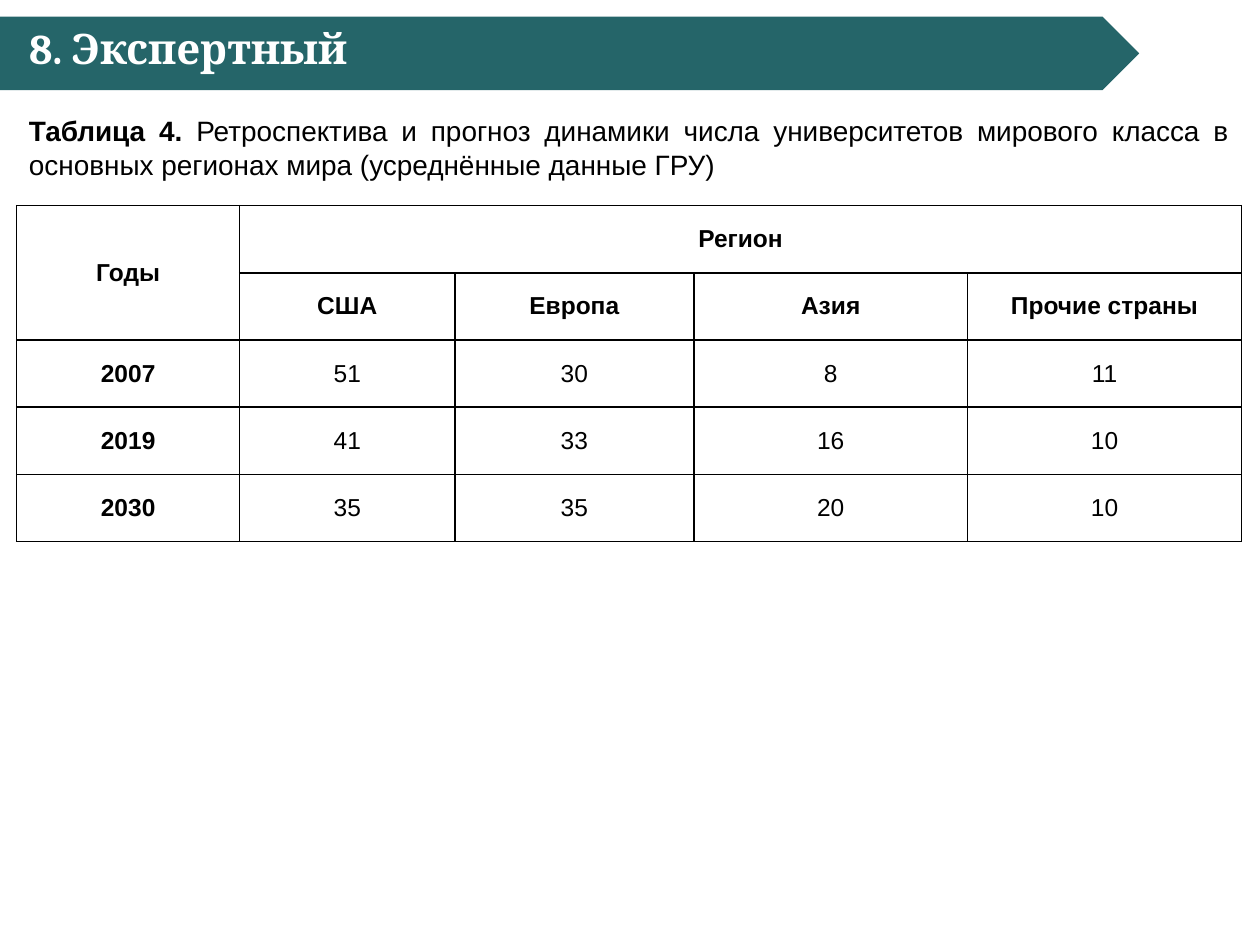
"""Builds the slide with the forecast table of world-class universities by region."""
from dataclasses import dataclass

from lxml import etree
from pptx import Presentation
from pptx.dml.color import RGBColor
from pptx.enum import shapes, text
from pptx.oxml import ns
from pptx.util import Pt


@dataclass(frozen=True)
class Theme:
    teal: str = "256569"
    white: str = "FFFFFF"
    black: str = "000000"
    heading_font: str = "Cambria"
    body_font: str = "Arial"
    title_size: int = 24
    caption_size: int = 16
    cell_size: int = 14


THEME = Theme()
LEFT = 9.5
CONTENT_WIDTH = 700
ROW_HEIGHT = 38.4
COLUMN_WIDTHS = (127.5, 123, 136.5, 156.5, 156.5)
ROWS = (
    ("Годы", "Регион", "", "", ""),
    ("", "США", "Европа", "Азия", "Прочие страны"),
    ("2007", "51", "30", "8", "11"),
    ("2019", "41", "33", "16", "10"),
    ("2030", "35", "35", "20", "10"),
)
HEADER_ROWS = 2


def add_run(paragraph, words, size, font=THEME.body_font, color=THEME.black, bold=False):
    run = paragraph.add_run()
    run.text = words
    run.font.name = font
    run.font.size = Pt(size)
    run.font.bold = bold
    run.font.color.rgb = RGBColor.from_string(color)


def add_banner(slide):
    banner = slide.shapes.add_shape(
        shapes.MSO_SHAPE.PENTAGON, Pt(0), Pt(9.5), Pt(651), Pt(42))
    banner.shadow.inherit = False
    banner.fill.solid()
    banner.fill.fore_color.rgb = RGBColor.from_string(THEME.teal)
    banner.line.fill.background()
    slide.shapes.title.element.addprevious(banner.element)


def set_title(slide, words):
    title = slide.shapes.title
    title.left, title.top, title.width, title.height = Pt(LEFT), Pt(9.5), Pt(291), Pt(36)
    frame = title.text_frame
    frame.word_wrap = True
    frame.auto_size = text.MSO_AUTO_SIZE.SHAPE_TO_FIT_TEXT
    frame.vertical_anchor = text.MSO_ANCHOR.TOP
    frame.paragraphs[0].alignment = text.PP_ALIGN.LEFT
    add_run(frame.paragraphs[0], words, THEME.title_size,
            font=THEME.heading_font, color=THEME.white, bold=True)


def add_caption(slide, label, words):
    caption = slide.shapes.add_textbox(Pt(LEFT), Pt(61.3), Pt(CONTENT_WIDTH), Pt(46))
    caption.text_frame.word_wrap = True
    paragraph = caption.text_frame.paragraphs[0]
    paragraph.alignment = text.PP_ALIGN.JUSTIFY
    add_run(paragraph, label, THEME.caption_size, bold=True)
    add_run(paragraph, words, THEME.caption_size)


def set_borders(cell):
    properties = cell._tc.get_or_add_tcPr()
    for side in ("a:lnL", "a:lnR", "a:lnT", "a:lnB"):
        border = etree.SubElement(properties, ns.qn(side), w=str(Pt(1)))
        fill = etree.SubElement(border, ns.qn("a:solidFill"))
        etree.SubElement(fill, ns.qn("a:srgbClr"), val=THEME.black)


def fill_cell(cell, words, bold):
    set_borders(cell)
    cell.fill.background()
    cell.vertical_anchor = text.MSO_ANCHOR.MIDDLE
    cell.margin_left = cell.margin_right = Pt(5)
    cell.margin_top = cell.margin_bottom = Pt(0)
    if words:
        paragraph = cell.text_frame.paragraphs[0]
        paragraph.alignment = text.PP_ALIGN.CENTER
        add_run(paragraph, words, THEME.cell_size, bold=bold)


def add_region_table(slide):
    regions = slide.shapes.add_table(
        len(ROWS), len(COLUMN_WIDTHS), Pt(LEFT), Pt(117.5),
        Pt(sum(COLUMN_WIDTHS)), Pt(ROW_HEIGHT * len(ROWS))).table
    regions.first_row = regions.horz_banding = False
    for column, width in zip(regions.columns, COLUMN_WIDTHS):
        column.width = Pt(width)
    for r, row in enumerate(ROWS):
        regions.rows[r].height = Pt(ROW_HEIGHT)
        for c, words in enumerate(row):
            fill_cell(regions.cell(r, c), words, bold=r < HEADER_ROWS or c == 0)
    regions.cell(0, 0).merge(regions.cell(1, 0))
    regions.cell(0, 1).merge(regions.cell(0, len(COLUMN_WIDTHS) - 1))


def main():
    deck = Presentation()
    deck.slide_width, deck.slide_height = Pt(720), Pt(540)
    slide = deck.slides.add_slide(deck.slide_layouts[5])
    add_banner(slide)
    set_title(slide, "8. Экспертный")
    add_caption(slide, "Таблица 4.",
                " Ретроспектива и прогноз динамики числа университетов мирового класса "
                "в основных регионах мира (усреднённые данные ГРУ)")
    add_region_table(slide)
    deck.save("out.pptx")


if __name__ == "__main__":
    main()
